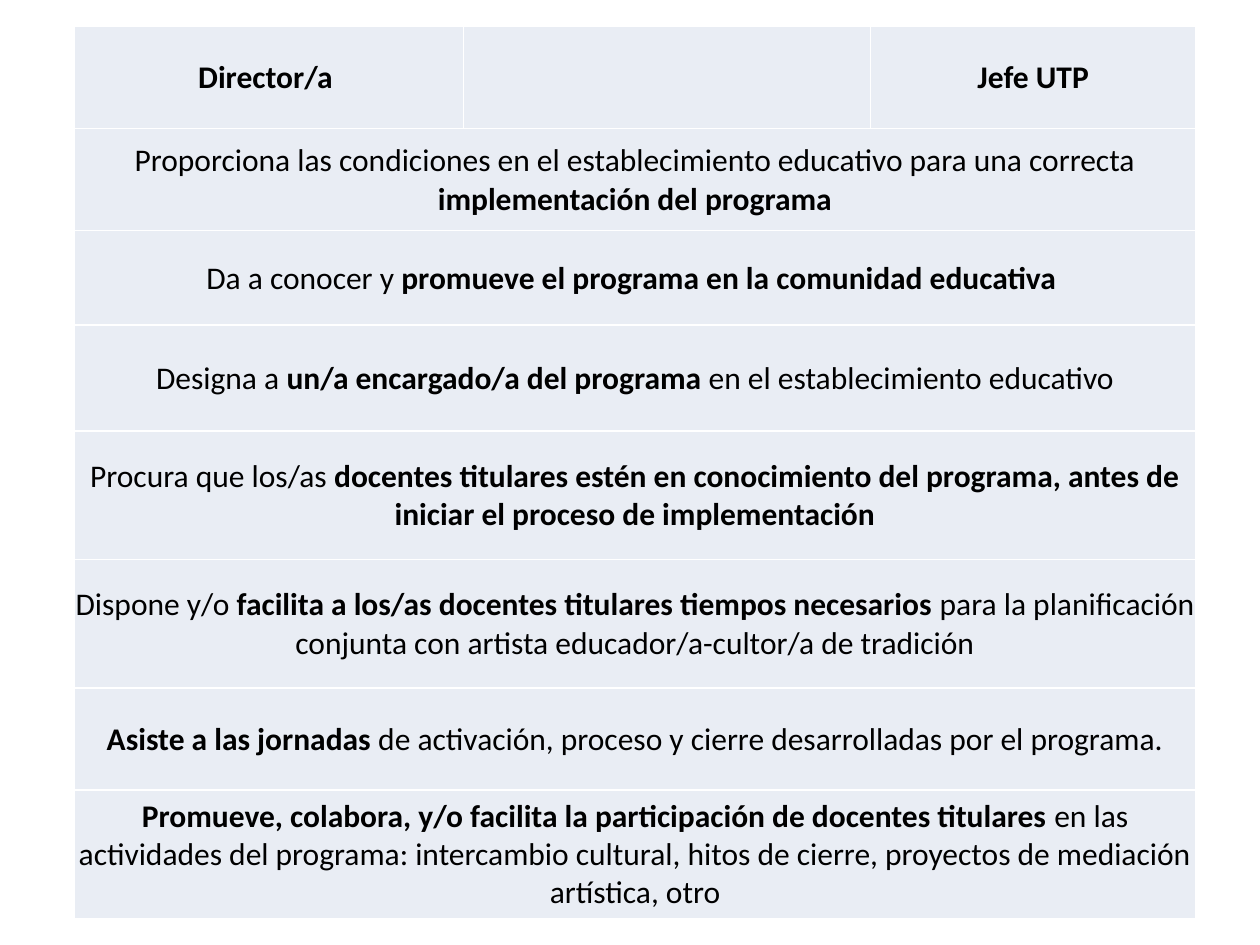
"""Build a slide with a table of the duties of the school's director and UTP head."""
from lxml.etree import SubElement
from pptx import Presentation
from pptx.dml.color import RGBColor
from pptx.enum.text import MSO_ANCHOR, PP_ALIGN
from pptx.oxml.ns import qn
from pptx.util import Inches, Pt

PLAIN, BOLD = False, True
HEADINGS = ["Director/a ", "", "Jefe UTP"]
DUTIES = [
    [("Proporciona las condiciones en el establecimiento educativo para una correcta ", PLAIN),
     ("implementación del programa", BOLD)],
    [("Da a conocer y ", PLAIN),
     ("promueve el programa en la comunidad educativa ", BOLD)],
    [("Designa a ", PLAIN),
     ("un/a encargado/a del programa ", BOLD),
     ("en el establecimiento educativo", PLAIN)],
    [("Procura que los/as ", PLAIN),
     ("docentes titulares estén en conocimiento del programa, "
      "antes de iniciar el proceso de implementación", BOLD)],
    [("Dispone y/o ", PLAIN),
     ("facilita a los/as docentes titulares tiempos necesarios ", BOLD),
     ("para la planificación conjunta con artista educador/a-cultor/a de tradición", PLAIN)],
    [("Asiste a las jornadas ", BOLD),
     ("de activación, proceso y cierre desarrolladas por el programa.", PLAIN)],
    [("Promueve, colabora, y/o facilita la participación de docentes titulares ", BOLD),
     ("en las actividades del programa: intercambio cultural, hitos de cierre, "
      "proyectos de mediación artística, otro", PLAIN)],
]
COLORS = {"text": "000000", "cell": "E9EDF4", "border": "FFFFFF"}
FONT, TEXT_SIZE, BORDER_WIDTH = "Calibri", Pt(18), Pt(1)
SLIDE_WIDTH, SLIDE_HEIGHT = Inches(10), Inches(7.5)
LEFT_PERCENT, TOP_PERCENT = 5.9, 2.8
COLUMN_PERCENTS = [30.9, 32.3, 25.8]
ROW_PERCENTS = [10.8, 10.8, 10, 11.2, 13.6, 13.6, 10.8, 13.6]


def across(percent):
    return round(SLIDE_WIDTH * percent / 100)


def down(percent):
    return round(SLIDE_HEIGHT * percent / 100)


def add_borders(cell):
    properties = cell._tc.get_or_add_tcPr()
    for side in ("lnL", "lnR", "lnT", "lnB"):
        line = SubElement(properties, qn(f"a:{side}"), w=str(BORDER_WIDTH))
        fill = SubElement(line, qn("a:solidFill"))
        SubElement(fill, qn("a:srgbClr"), val=COLORS["border"])


def style_cell(cell):
    add_borders(cell)
    cell.fill.solid()
    cell.fill.fore_color.rgb = RGBColor.from_string(COLORS["cell"])
    cell.vertical_anchor = MSO_ANCHOR.MIDDLE
    cell.margin_left = cell.margin_right = cell.margin_top = Inches(0.01)
    cell.margin_bottom = 0


def write_cell(cell, spans):
    para = cell.text_frame.paragraphs[0]
    para.alignment = PP_ALIGN.CENTER
    for text, bold in spans:
        span = para.add_run()
        span.text = text
        span.font.name = FONT
        span.font.size = TEXT_SIZE
        span.font.bold = bold
        span.font.color.rgb = RGBColor.from_string(COLORS["text"])


def add_duties_table(page):
    table = page.shapes.add_table(
        len(ROW_PERCENTS), len(COLUMN_PERCENTS),
        across(LEFT_PERCENT), down(TOP_PERCENT),
        across(sum(COLUMN_PERCENTS)), down(sum(ROW_PERCENTS))).table
    table.first_row = table.horz_banding = False
    for column, percent in zip(table.columns, COLUMN_PERCENTS):
        column.width = across(percent)
    for row, percent in zip(table.rows, ROW_PERCENTS):
        row.height = down(percent)
    for cell in table.iter_cells():
        style_cell(cell)
    for index, heading in enumerate(HEADINGS):
        if heading:
            write_cell(table.cell(0, index), [(heading, BOLD)])
    for index, spans in enumerate(DUTIES, start=1):
        first = table.cell(index, 0)
        first.merge(table.cell(index, len(HEADINGS) - 1))
        write_cell(first, spans)


def main():
    deck = Presentation()
    deck.slide_width, deck.slide_height = SLIDE_WIDTH, SLIDE_HEIGHT
    page = deck.slides.add_slide(deck.slide_layouts[6])
    add_duties_table(page)
    deck.save("out.pptx")


if __name__ == "__main__":
    main()
